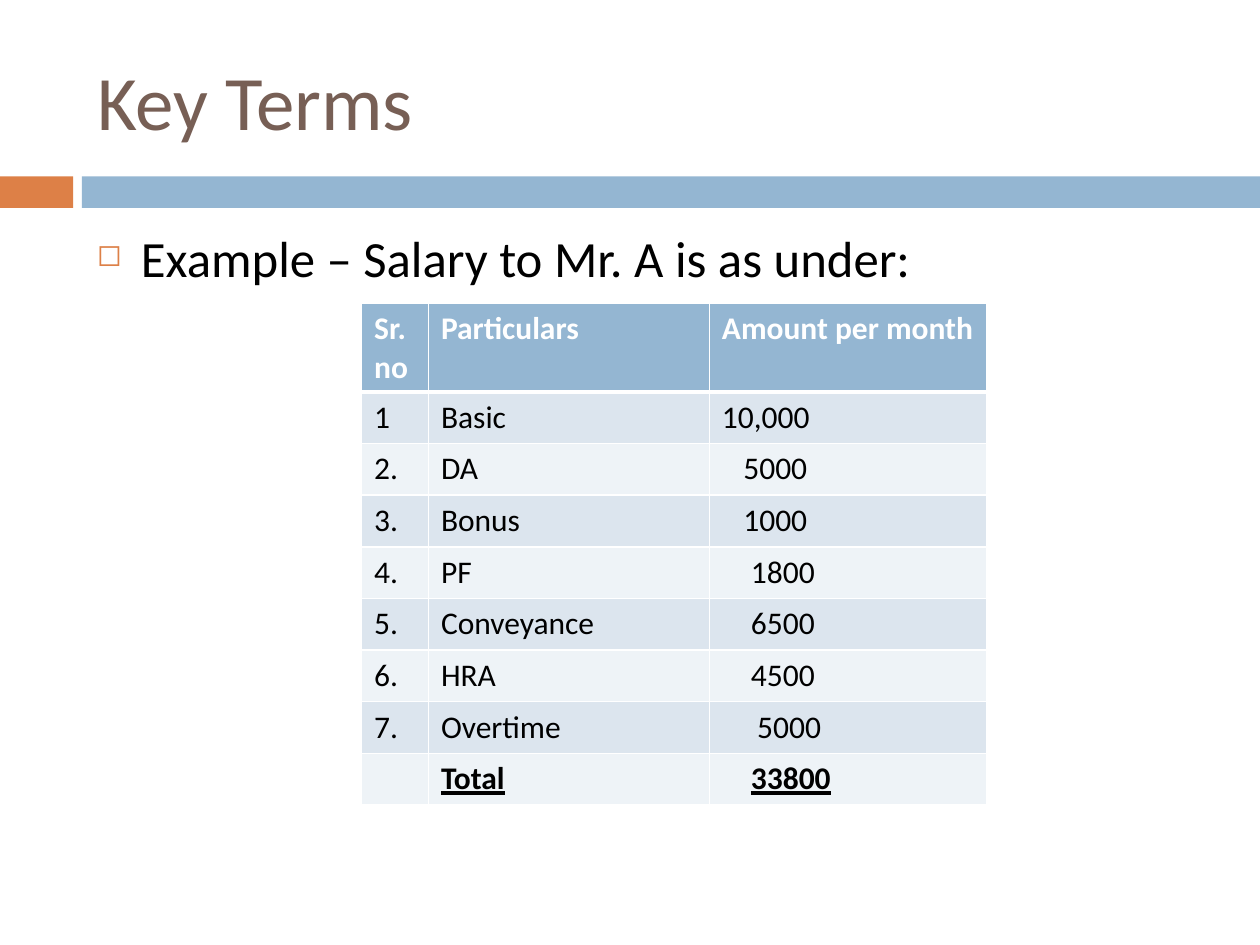
from dataclasses import dataclass
from lxml.etree import SubElement as Sub
from pptx import Presentation
from pptx.dml.color import RGBColor as RGB
from pptx.enum.shapes import MSO_SHAPE as Shape
from pptx.enum.text import MSO_ANCHOR as Anchor, PP_ALIGN as Align
from pptx.oxml.ns import qn
from pptx.util import Inches, Pt


@dataclass
class Theme:
    font: str = "Calibri"
    brown: str = "775F55"
    orange: str = "DD8047"
    blue: str = "94B6D2"
    bands: tuple = ("DCE5EE", "EEF3F7")
    white: str = "FFFFFF"
    black: str = "000000"
    head: int = 44
    body: int = 29
    cell: int = 18


theme = Theme()


def style(para, size, color, bold=False, under=False):
    for run in para.runs:
        font = run.font
        font.name, font.size = theme.font, Pt(size)
        font.bold, font.underline = bold, under
        font.color.rgb = RGB.from_string(color)


def edge(cell, side, width):
    line = Sub(cell._tc.get_or_add_tcPr(), qn(f"a:ln{side}"), w=str(Pt(width)))
    fill = Sub(line, qn("a:solidFill"))
    Sub(fill, qn("a:srgbClr"), val=theme.white)


prs = Presentation()
prs.slide_width, prs.slide_height = Inches(10), Inches(7.5)
slide = prs.slides.add_slide(prs.slide_layouts[5])
shapes = slide.shapes

# Bars under the title
for left, width, color in ((0, 0.58, theme.orange), (0.65, 9.35, theme.blue)):
    bar = shapes.add_shape(Shape.RECTANGLE, Inches(left), Inches(1.4),
                           Inches(width), Inches(0.25))
    bar.shadow.inherit = False
    bar.fill.solid()
    bar.fill.fore_color.rgb = RGB.from_string(color)
    bar.line.fill.background()

# Title
title = shapes.title
title.left, title.top = Inches(0.67), Inches(0.25)
title.width, title.height = Inches(8.92), Inches(1.08)
title.text_frame.text = "Key Terms"
title.text_frame.vertical_anchor = Anchor.MIDDLE
para = title.text_frame.paragraphs[0]
para.alignment = Align.LEFT
style(para, theme.head, theme.brown)

# Bulleted line
box = shapes.add_textbox(Inches(0.67), Inches(1.75), Inches(8.92), Inches(4.92))
box.text_frame.word_wrap = True
box.text_frame.text = "Example – Salary to Mr. A is as under:"
para = box.text_frame.paragraphs[0]
para.space_before = Pt(7)
style(para, theme.body, theme.black)
props = para._p.get_or_add_pPr()
props.set("marL", str(Inches(0.35)))
props.set("indent", str(-Inches(0.35)))
Sub(Sub(props, qn("a:buClr")), qn("a:srgbClr"), val=theme.orange)
Sub(props, qn("a:buSzPct"), val="60000")
Sub(props, qn("a:buChar"), char="◻")

# Salary table: number, item, amount, inset of the amount
rows = [
    ("Sr. no", "Particulars", "Amount per month", 0),
    ("1", "Basic", "10,000", 0),
    ("2.", "DA", "5000", 0.17),
    ("3.", "Bonus", "1000", 0.17),
    ("4.", "PF", "1800", 0.23),
    ("5.", "Conveyance", "6500", 0.23),
    ("6.", "HRA", "4500", 0.23),
    ("7.", "Overtime", "5000", 0.28),
    ("", "Total", "33800", 0.23),
]
widths = (0.53, 2.23, 2.2)
table = shapes.add_table(len(rows), len(widths), Inches(2.87), Inches(2.41),
                         Inches(sum(widths)), Inches(3.94)).table
for col, width in zip(table.columns, widths):
    col.width = Inches(width)

for r, (*texts, inset) in enumerate(rows):
    top, total = r == 0, r == len(rows) - 1
    table.rows[r].height = Inches(0.63 if top else 0.41)
    for c, text in enumerate(texts):
        cell = table.cell(r, c)
        for side in "LRTB":
            thick = (top and side == "B") or (r == 1 and side == "T")
            edge(cell, side, 3 if thick else 1)
        cell.fill.solid()
        cell.fill.fore_color.rgb = RGB.from_string(
            theme.blue if top else theme.bands[(r - 1) % 2])
        para = cell.text_frame.paragraphs[0]
        para.font.size = Pt(theme.cell)
        if not text:
            continue
        # A tab carries the total's underline across the inset
        shift = c == 2 and inset > 0
        para.text = "\t" + text if shift else text
        if shift:
            tabs = Sub(para._p.get_or_add_pPr(), qn("a:tabLst"))
            Sub(tabs, qn("a:tab"), pos=str(Inches(inset)), algn="l")
        style(para, theme.cell, theme.white if top else theme.black,
              top or total, total)

prs.save("out.pptx")
